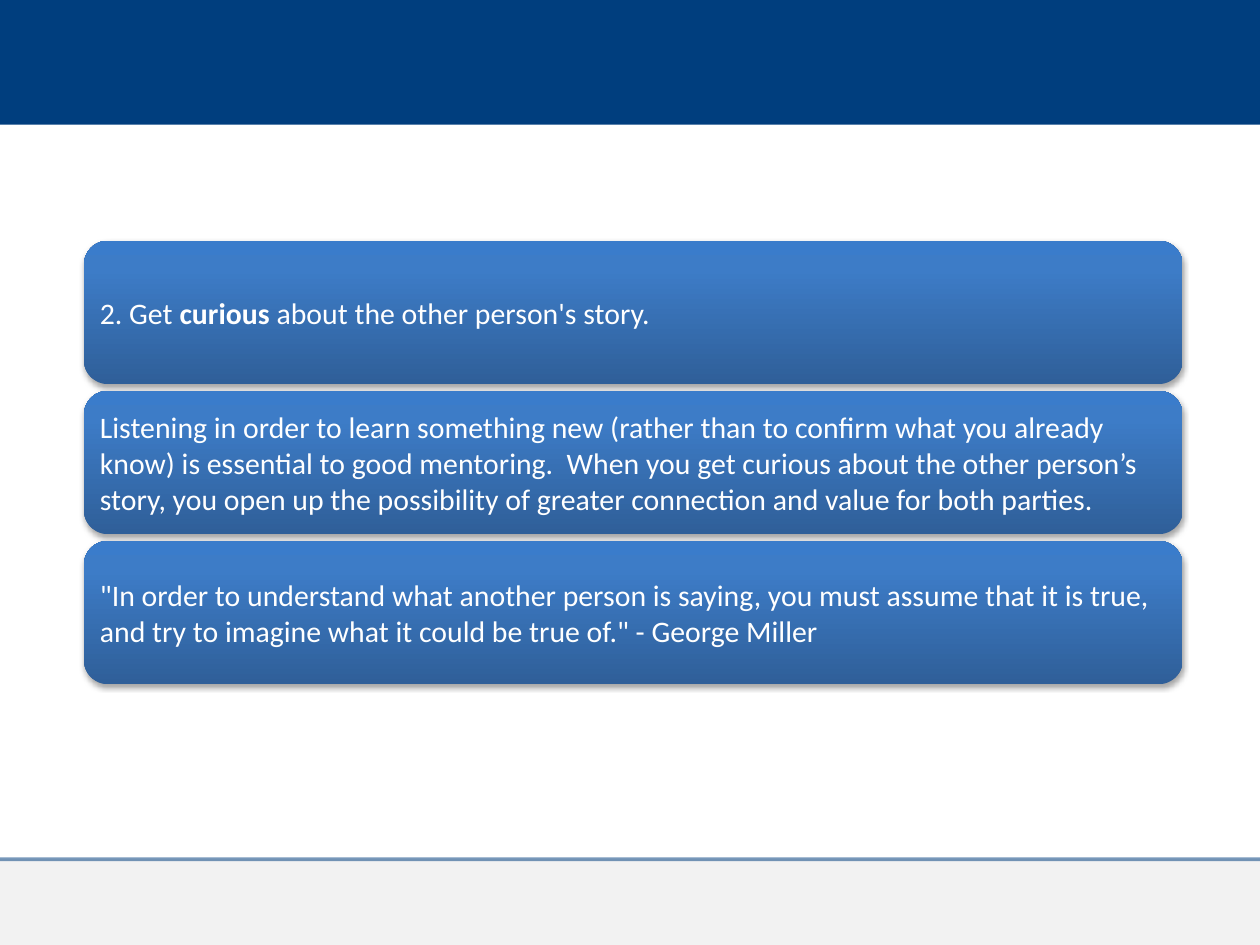
"""Build a slide of three stacked cards about listening with curiosity."""
import lxml.etree
import pptx
import pptx.dml.color
import pptx.enum.shapes
import pptx.enum.text
import pptx.oxml
import pptx.oxml.ns
import pptx.util

Pt = pptx.util.Pt
Shapes = pptx.enum.shapes.MSO_SHAPE

CARDS = [
    [("2. Get ", False), ("curious", True), (" about the other person's story.", False)],
    [("Listening in order to learn something new (rather than to confirm what you already know) "
      "is essential to good mentoring.  When you get curious about the other person’s story, "
      "you open up the possibility of greater connection and value for both parties.", False)],
    [('"In order to understand what another person is saying, you must assume that it is true, '
      'and try to imagine what it could be true of." - George Miller', False)],
]

THEME = {
    "font": "Calibri",
    "size": 17,
    "text": "FFFFFF",
    "header": "003E7E",
    "footer": ("808080", 10),
    "rule": ("003E7E", 52),
    "shadow": ("000000", 35),
    "gradient": [(0, "2F5F99"), (80, "3D7CC7"), (100, "3A7CCB")],
}

WIDTH, HEIGHT = 720, 540
HEADER_HEIGHT = 71.3
FOOTER_TOP = 491
CARD_LEFT, CARD_TOP, CARD_WIDTH, CARD_HEIGHT, CARD_PITCH = 48, 137.6, 627.8, 81.9, 85.75
CARD_INSET = 5.1


def rgb(value):
    return pptx.dml.color.RGBColor.from_string(value)


def set_alpha(fill, percent):
    color = fill._xPr.find(".//" + pptx.oxml.ns.qn("a:srgbClr"))
    lxml.etree.SubElement(color, pptx.oxml.ns.qn("a:alpha"), val=str(percent * 1000))


def add_shape(slide, kind, left, top, width, height):
    shape = slide.shapes.add_shape(kind, Pt(left), Pt(top), Pt(width), Pt(height))
    shape.shadow.inherit = False
    shape.line.fill.background()
    return shape


def add_band(slide, top, height, color, alpha=100):
    band = add_shape(slide, Shapes.RECTANGLE, 0, top, WIDTH, height)
    band.fill.solid()
    band.fill.fore_color.rgb = rgb(color)
    if alpha < 100:
        set_alpha(band.fill, alpha)


def add_rule(slide, top):
    rule = slide.shapes.add_connector(
        pptx.enum.shapes.MSO_CONNECTOR.STRAIGHT, 0, Pt(top), Pt(WIDTH), Pt(top))
    color, alpha = THEME["rule"]
    rule.line.width = Pt(2.25)
    rule.line.color.rgb = rgb(color)
    set_alpha(rule.line.fill, alpha)
    lxml.etree.SubElement(rule._element.spPr, pptx.oxml.ns.qn("a:effectLst"))


def style_card(card):
    namespace = pptx.oxml.ns.nsdecls("a")
    stops = "".join(f'<a:gs pos="{position * 1000}"><a:srgbClr val="{color}"/></a:gs>'
                    for position, color in THEME["gradient"])
    properties = card._element.spPr
    gradient = pptx.oxml.parse_xml(
        f'<a:gradFill {namespace} rotWithShape="1"><a:gsLst>{stops}</a:gsLst>'
        '<a:lin ang="16200000" scaled="0"/></a:gradFill>')
    properties.find(pptx.oxml.ns.qn("a:prstGeom")).addnext(gradient)
    color, alpha = THEME["shadow"]
    shadow = pptx.oxml.parse_xml(
        f'<a:outerShdw {namespace} blurRad="{Pt(3.1)}" dist="{Pt(1.8)}" dir="5400000" '
        f'rotWithShape="0"><a:srgbClr val="{color}"><a:alpha val="{alpha * 1000}"/>'
        '</a:srgbClr></a:outerShdw>')
    properties.find(pptx.oxml.ns.qn("a:effectLst")).append(shadow)


def add_card(slide, top, runs):
    card = add_shape(slide, Shapes.ROUNDED_RECTANGLE, CARD_LEFT, top, CARD_WIDTH, CARD_HEIGHT)
    style_card(card)
    frame = card.text_frame
    frame.word_wrap = True
    frame.vertical_anchor = pptx.enum.text.MSO_ANCHOR.MIDDLE
    frame.margin_left = frame.margin_right = Pt(CARD_INSET)
    frame.margin_top = frame.margin_bottom = Pt(CARD_INSET)
    paragraph = frame.paragraphs[0]
    paragraph.alignment = pptx.enum.text.PP_ALIGN.LEFT
    for text, bold in runs:
        run = paragraph.add_run()
        run.text = text
        run.font.name = THEME["font"]
        run.font.size = Pt(THEME["size"])
        run.font.bold = bold
        run.font.color.rgb = rgb(THEME["text"])


def main():
    presentation = pptx.Presentation()
    presentation.slide_width, presentation.slide_height = Pt(WIDTH), Pt(HEIGHT)
    slide = presentation.slides.add_slide(presentation.slide_layouts[6])
    add_band(slide, 0, HEADER_HEIGHT, THEME["header"])
    add_band(slide, FOOTER_TOP, HEIGHT - FOOTER_TOP, *THEME["footer"])
    add_rule(slide, FOOTER_TOP)
    for index, runs in enumerate(CARDS):
        add_card(slide, CARD_TOP + index * CARD_PITCH, runs)
    presentation.save("out.pptx")


if __name__ == "__main__":
    main()
